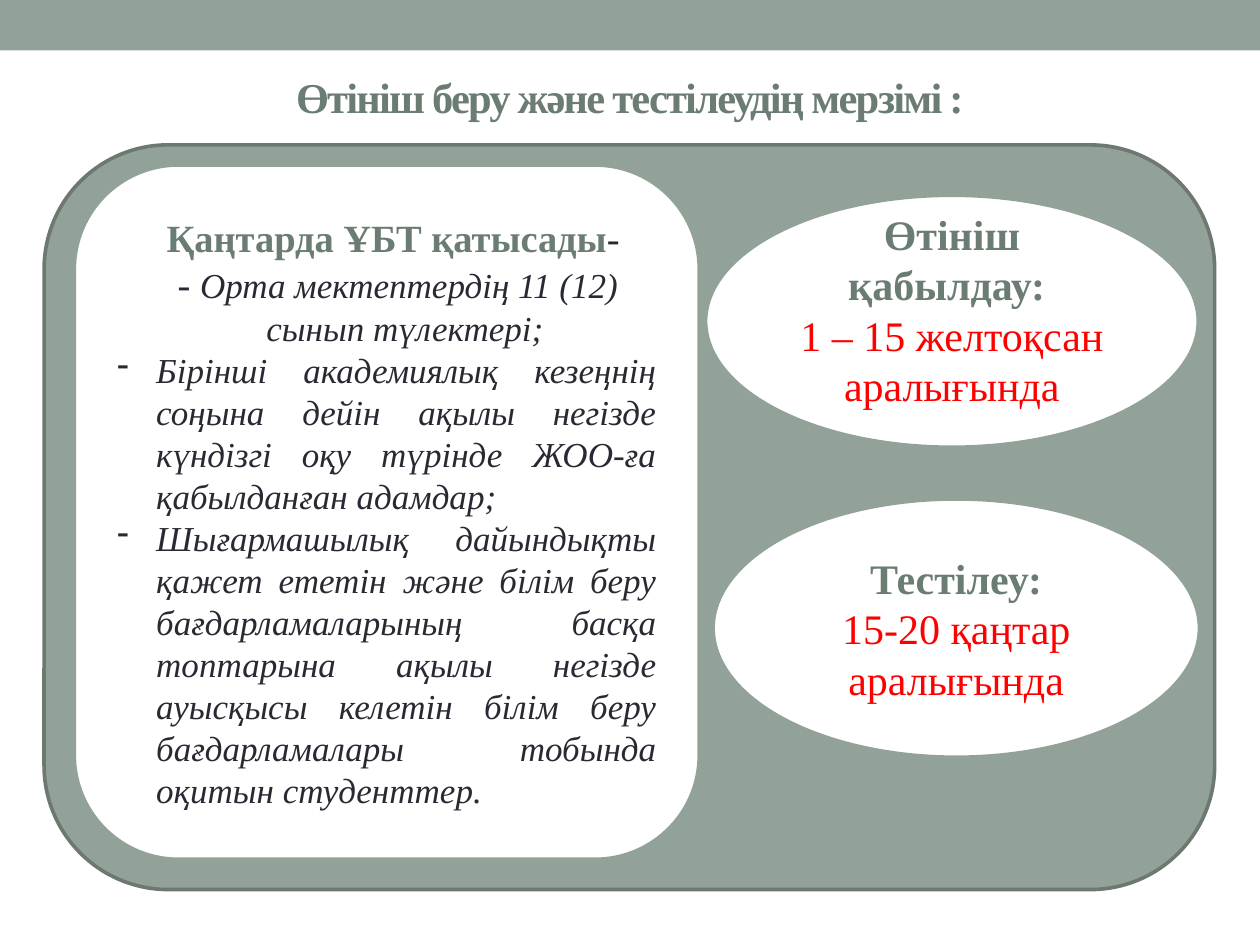
from dataclasses import dataclass

from lxml import etree
from pptx import Presentation
from pptx.dml.color import RGBColor
from pptx.enum.shapes import MSO_SHAPE
from pptx.enum.text import MSO_ANCHOR, PP_ALIGN
from pptx.oxml.ns import qn
from pptx.util import Inches, Pt

RECT, ROUND, OVAL = MSO_SHAPE.RECTANGLE, MSO_SHAPE.ROUNDED_RECTANGLE, MSO_SHAPE.OVAL
CENTER, JUSTIFY = PP_ALIGN.CENTER, PP_ALIGN.JUSTIFY
MIDDLE = MSO_ANCHOR.MIDDLE
WIDTH, HEIGHT = 10, 7.5
FONT = "Times New Roman"
COLORS = {"sage": "93A299", "edge": "6D7871", "heading": "6B7D72",
          "body": "292934", "red": "FF0000", "white": "FFFFFF"}


@dataclass
class Run:
    text: str
    size: float
    color: str
    bold: bool = False
    italic: bool = False


@dataclass
class Para:
    runs: list[Run]
    align: int = CENTER
    margin: float = 0
    indent: float = 0
    bullet: str = ""


@dataclass
class Panel:
    kind: int
    box: tuple[float, float, float, float]  # left, top, width, height as slide shares
    fill: str
    line: str = ""
    paras: tuple[Para, ...] = ()
    bottom: float = 0.05


def rgb(name: str) -> RGBColor:
    return RGBColor.from_string(COLORS[name])


def place(box: tuple[float, float, float, float]) -> list[int]:
    return [Inches(share * side) for share, side in zip(box, (WIDTH, HEIGHT) * 2)]


def write(tf, paras: tuple[Para, ...]) -> None:
    tf.word_wrap = True
    tf.vertical_anchor = MIDDLE
    for i, para in enumerate(paras):
        p = tf.paragraphs[0] if i == 0 else tf.add_paragraph()
        p.alignment = para.align
        p.font.name = FONT
        pPr = p._p.get_or_add_pPr()
        pPr.set("marL", str(Inches(para.margin)))
        pPr.set("indent", str(Inches(para.indent)))
        if para.bullet:
            bullet = etree.Element(qn("a:buChar"), char=para.bullet)
            pPr.insert_element_before(bullet, "a:defRPr")
        for run in para.runs:
            r = p.add_run()
            r.text = run.text
            r.font.name = FONT
            r.font.size = Pt(run.size)
            r.font.bold, r.font.italic = run.bold, run.italic
            r.font.color.rgb = rgb(run.color)


def draw(s, panel: Panel) -> None:
    sp = s.shapes.add_shape(panel.kind, *place(panel.box))
    sp.shadow.inherit = False
    sp.fill.solid()
    sp.fill.fore_color.rgb = rgb(panel.fill)
    if panel.line:
        sp.line.color.rgb = rgb(panel.line)
        sp.line.width = Pt(2.08)
    else:
        sp.line.fill.background()
    if panel.paras:
        sp.text_frame.margin_bottom = Inches(panel.bottom)
        write(sp.text_frame, panel.paras)


def heading(text: str, size: float) -> Run:
    return Run(text, size, "heading", bold=True)


def item(text: str) -> Para:
    return Para([Run(text, 20, "body", italic=True)], JUSTIFY, 0.31, -0.31, "-")


def period(title: str, dates: str) -> tuple[Para, ...]:
    return Para([heading(title, 24)]), Para([Run(dates, 24, "red")])


PARTICIPANTS = (
    Para([heading("Қаңтарда ҰБТ қатысады", 22), Run("-", 22, "body")],
         margin=0.29, indent=-0.19),
    Para([Run(" - ", 22, "body"),
          Run("Орта мектептердің 11 (12) сынып түлектері;", 20, "body", italic=True)],
         margin=0.29, indent=-0.19),
    item("Бірінші академиялық кезеңнің соңына дейін ақылы негізде күндізгі "
         "оқу түрінде ЖОО-ға қабылданған адамдар;"),
    item("Шығармашылық дайындықты қажет ететін және білім беру бағдарламаларының "
         "басқа топтарына ақылы негізде ауысқысы келетін білім беру "
         "бағдарламалары тобында оқитын студенттер."),
)

PANELS = (
    # Top band and large backdrop
    Panel(RECT, (0, 0, 1, 0.4 / HEIGHT), "sage"),
    Panel(ROUND, (0.035, 1.15 / HEIGHT, 0.929, 5.91 / HEIGHT), "sage", "edge"),
    # Who takes part
    Panel(ROUND, (0.059, 1.31 / HEIGHT, 0.496, 5.51 / HEIGHT), "white", "sage",
          PARTICIPANTS),
    # Test dates and application dates
    Panel(OVAL, (0.566, 3.96 / HEIGHT, 0.386, 2.05 / HEIGHT), "white", "sage",
          period("Тестілеу:", "15-20 қаңтар аралығында")),
    Panel(OVAL, (0.56, 1.55 / HEIGHT, 0.391, 2 / HEIGHT), "white", "sage",
          period("Өтініш қабылдау: ", "1 – 15 желтоқсан аралығында"), bottom=0.24),
)


def main() -> None:
    prs = Presentation()
    prs.slide_width, prs.slide_height = Inches(WIDTH), Inches(HEIGHT)
    s = prs.slides.add_slide(prs.slide_layouts[6])
    for panel in PANELS:
        draw(s, panel)

    # Title
    title = s.shapes.add_textbox(*place((0.05, 0.44 / HEIGHT, 0.9, 0.66 / HEIGHT)))
    write(title.text_frame, (Para([heading("Өтініш беру және тестілеудің мерзімі :", 24.3)]),))
    title.text_frame.paragraphs[0].runs[0].font._element.set("spc", "-100")

    prs.save("out.pptx")


if __name__ == "__main__":
    main()
